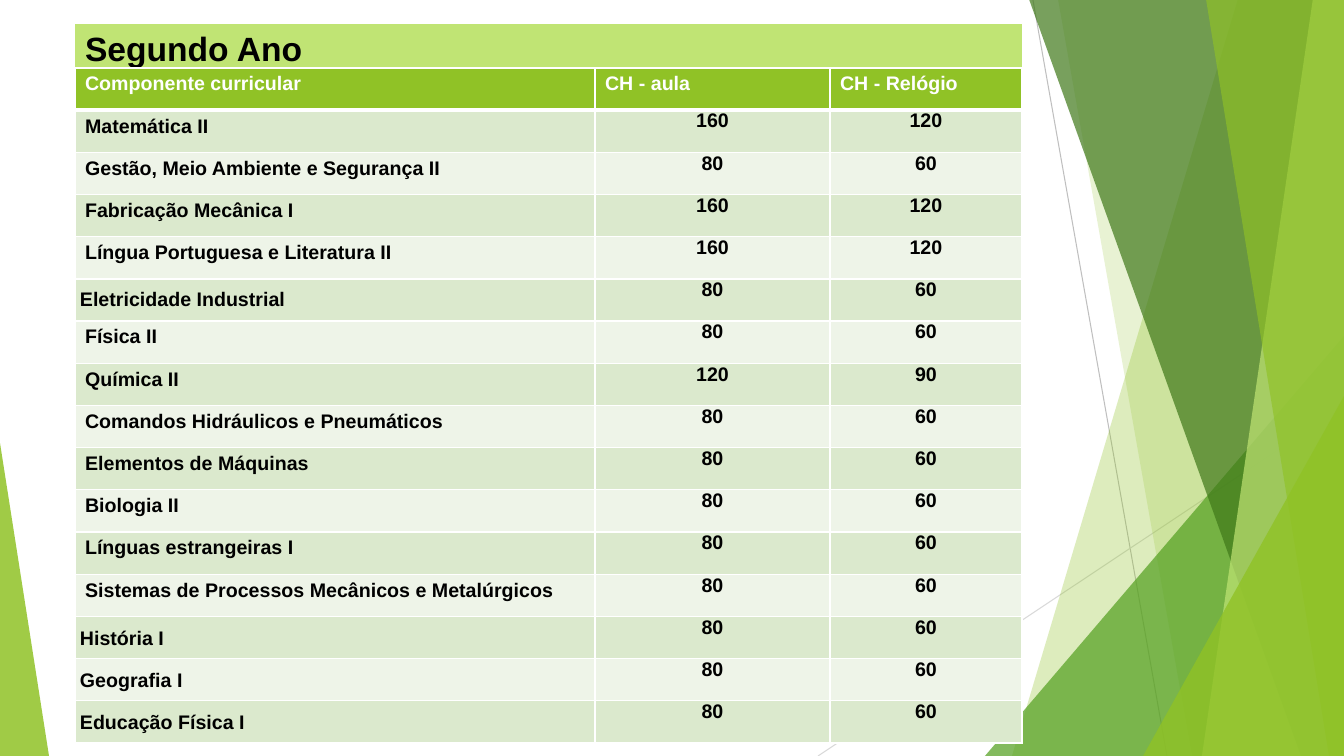
from lxml import etree
from pptx import Presentation
from pptx.dml.color import RGBColor
from pptx.enum.shapes import MSO_CONNECTOR, MSO_SHAPE
from pptx.enum.text import MSO_ANCHOR, PP_ALIGN
from pptx.oxml.ns import qn
from pptx.util import Pt

STRAIGHT = MSO_CONNECTOR.STRAIGHT
TRIANGLE = MSO_SHAPE.ISOSCELES_TRIANGLE
TOP, MIDDLE = MSO_ANCHOR.TOP, MSO_ANCHOR.MIDDLE
LEFT, CENTER, JUSTIFY = PP_ALIGN.LEFT, PP_ALIGN.CENTER, PP_ALIGN.JUSTIFY

TITLE = "Segundo Ano"
HEADER = ("Componente curricular", "CH - aula", "CH - Relógio")
SUBJECTS = [
    ("Matemática II", 160, 120),
    ("Gestão, Meio Ambiente e Segurança II", 80, 60),
    ("Fabricação Mecânica I", 160, 120),
    ("Língua Portuguesa e Literatura II", 160, 120),
    ("Eletricidade Industrial", 80, 60),
    ("Física II", 80, 60),
    ("Química II", 120, 90),
    ("Comandos Hidráulicos e Pneumáticos", 80, 60),
    ("Elementos de Máquinas", 80, 60),
    ("Biologia II", 80, 60),
    ("Línguas estrangeiras I", 80, 60),
    ("Sistemas de Processos Mecânicos e Metalúrgicos", 80, 60),
    ("História I", 80, 60),
    ("Geografia I", 80, 60),
    ("Educação Física I", 80, 60),
]
JUSTIFIED = {"Eletricidade Industrial"}
LOOSE = {"História I", "Geografia I", "Educação Física I"}

COLORS = {
    "black": "000000",
    "white": "FFFFFF",
    "gray": "BFBFBF",
    "silver": "D9D9D9",
    "lime": "90C226",
    "pale_lime": "C0E474",
    "green": "54A021",
    "forest": "3F7819",
    "band_dark": "DBE9CD",
    "band_light": "EEF4E8",
}
FONT = "Arial"

SCALE = 914400 / 100.8
WIDTH, HEIGHT = 1344, 756
TITLE_BOX = (75, 24, 947, 49)
TABLE_BOX = (75, 68, 947, 675)
COLUMNS = (520, 235, 192)
TIGHT_MARGIN = 5

LINES = [
    ((1033, 0), (1167, 756), "gray"),
    ((1344, 406), (818, 756), "silver"),
]
BACK_BANDS = [(1238, 1012, "lime", 30), (1058, 1192, "lime", 20)]
BACK_TRIANGLE = ((985, 336, 359, 420), 1, "green", 72)
FRONT_BANDS = [
    (1029, 1301, "forest", 70),
    (1313, 1202, "pale_lime", 70),
    (1206, 1329, "lime", 65),
]
FRONT_TRIANGLES = [
    ((1143, 396, 201, 360), 1, "lime", 80),
    ((0, 443, 49, 313), 0, "lime", 85),
]


def px(length):
    return round(length * SCALE)


def box(lengths):
    return [px(length) for length in lengths]


def color(name):
    return RGBColor.from_string(COLORS[name])


def paint(fill, name):
    fill.solid()
    fill.fore_color.rgb = color(name)


def decorate(shape, name, opacity):
    shape.shadow.inherit = False
    shape.line.fill.background()
    paint(shape.fill, name)
    tint = shape._element.spPr.find(qn("a:solidFill"))[0]
    etree.SubElement(tint, qn("a:alpha"), val=str(opacity * 1000))


def add_line(shapes, start, end, name):
    line = shapes.add_connector(STRAIGHT, *box(start + end))
    line.line.color.rgb = color(name)
    line.line.width = Pt(0.75)
    etree.SubElement(line._element.spPr, qn("a:effectLst"))


def add_band(shapes, top_x, bottom_x, name, opacity):
    builder = shapes.build_freeform(top_x, -1, scale=SCALE)
    builder.add_line_segments([(WIDTH, -1), (WIDTH, HEIGHT), (bottom_x, HEIGHT)])
    decorate(builder.convert_to_shape(), name, opacity)


def add_triangle(shapes, place, apex, name, opacity):
    triangle = shapes.add_shape(TRIANGLE, *box(place))
    triangle.adjustments[0] = apex
    decorate(triangle, name, opacity)


def format_text(paragraph, size, name):
    for run in paragraph.runs:
        run.font.name = FONT
        run.font.size = Pt(size)
        run.font.bold = True
        run.font.color.rgb = color(name)


def add_borders(cell, top, bottom):
    properties = cell._tc.get_or_add_tcPr()
    sides = (("a:lnL", 1), ("a:lnR", 1), ("a:lnT", top), ("a:lnB", bottom))
    for index, (side, width) in enumerate(sides):
        border = etree.Element(qn(side), w=str(Pt(width)))
        fill = etree.SubElement(border, qn("a:solidFill"))
        etree.SubElement(fill, qn("a:srgbClr"), val=COLORS["white"])
        properties.insert(index, border)


def fill_cell(cell, value, row, column):
    cell.text_frame.text = str(value)
    paragraph = cell.text_frame.paragraphs[0]
    format_text(paragraph, 14, "black" if row else "white")
    band = "band_dark" if row % 2 else "band_light"
    paint(cell.fill, band if row else "lime")
    add_borders(cell, 3 if row == 1 else 1, 1 if row else 3)
    is_number = row > 0 and column > 0
    is_special = value in JUSTIFIED | LOOSE
    cell.vertical_anchor = MIDDLE if is_special else TOP
    paragraph.alignment = CENTER if is_number else JUSTIFY if value in JUSTIFIED else LEFT
    if is_number or is_special:
        cell.margin_left = cell.margin_right = px(TIGHT_MARGIN)
        cell.margin_top = cell.margin_bottom = 0
        paragraph.space_after = Pt(8)
    if value in LOOSE:
        paragraph.line_spacing = 1.07


def add_title(slide):
    title = slide.shapes.title
    title.left, title.top, title.width, title.height = box(TITLE_BOX)
    paint(title.fill, "pale_lime")
    title.text_frame.text = TITLE
    title.text_frame.vertical_anchor = MIDDLE
    paragraph = title.text_frame.paragraphs[0]
    paragraph.alignment = LEFT
    format_text(paragraph, 24, "black")
    slide.shapes._spTree.append(title._element)


def add_subjects(slide):
    rows = [HEADER] + SUBJECTS
    frame = slide.shapes.add_table(len(rows), len(COLUMNS), *box(TABLE_BOX))
    table = frame.table
    table.horz_banding = False
    for column, width in zip(table.columns, COLUMNS):
        column.width = px(width)
    for row, values in enumerate(rows):
        table.rows[row].height = px(TABLE_BOX[3] / len(rows))
        for column, value in enumerate(values):
            fill_cell(table.cell(row, column), value, row, column)


def main():
    presentation = Presentation()
    presentation.slide_width, presentation.slide_height = px(WIDTH), px(HEIGHT)
    slide = presentation.slides.add_slide(presentation.slide_layouts[5])
    for line in LINES:
        add_line(slide.shapes, *line)
    for band in BACK_BANDS:
        add_band(slide.shapes, *band)
    add_triangle(slide.shapes, *BACK_TRIANGLE)
    for band in FRONT_BANDS:
        add_band(slide.shapes, *band)
    for triangle in FRONT_TRIANGLES:
        add_triangle(slide.shapes, *triangle)
    add_title(slide)
    add_subjects(slide)
    presentation.save("out.pptx")


if __name__ == "__main__":
    main()
